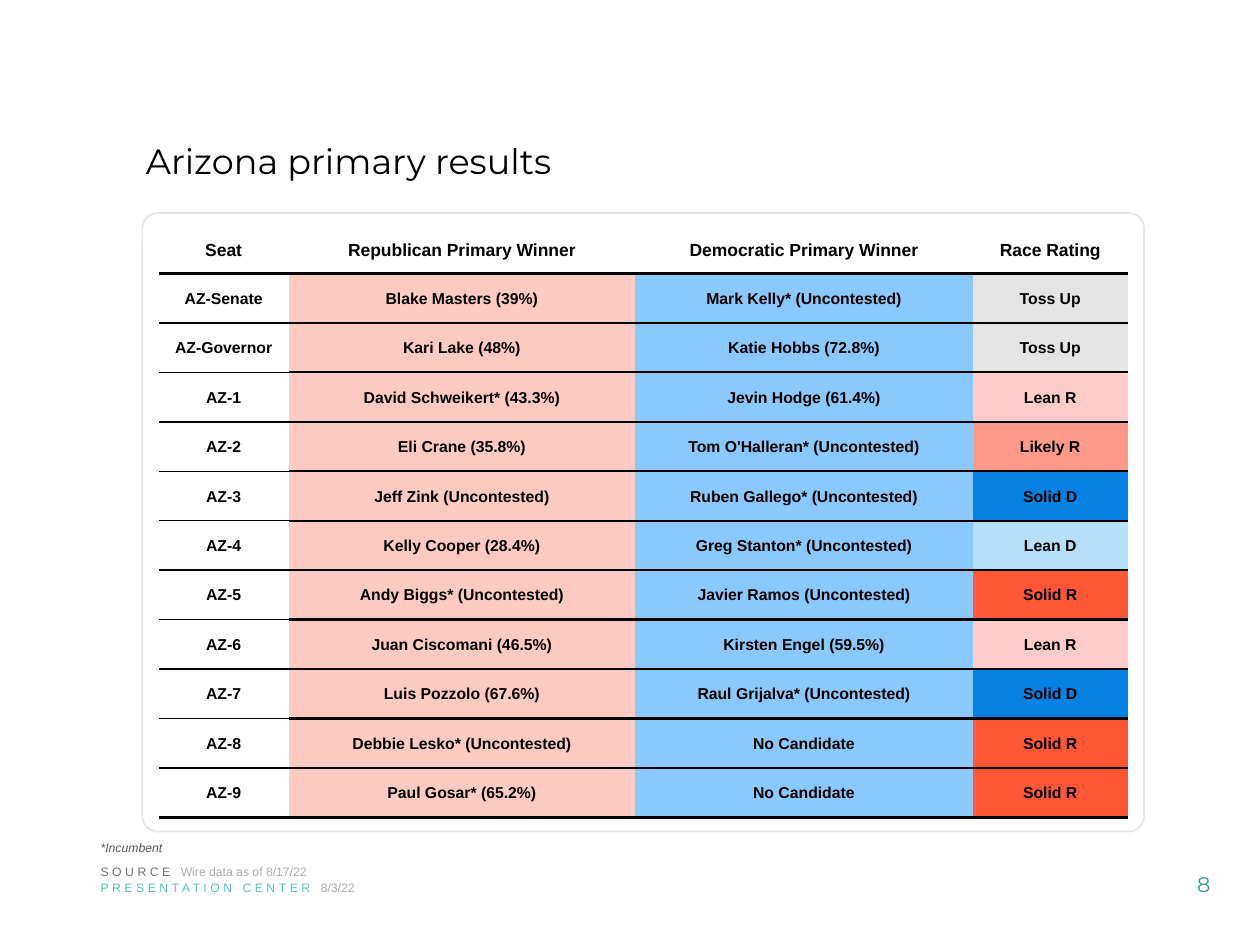
from lxml.etree import SubElement
from pptx import Presentation
from pptx.dml.color import RGBColor
from pptx.enum.shapes import MSO_SHAPE
from pptx.enum.text import MSO_ANCHOR, PP_ALIGN
from pptx.oxml.ns import qn
from pptx.util import Emu, Pt

PX = 9144  # 100 px to the inch
THEME = {
    "body": "Arial", "display": "Montserrat",
    "title_size": 20, "number_size": 12, "header_size": 10, "cell_size": 9, "note_size": 7,
    "black": "000000", "white": "FFFFFF", "panel_line": "E7E6E6",
    "teal": "55C6B5", "number": "359F8F", "label": "767171", "muted": "AFABAB", "note": "595959",
    "republican": "FFCAC1", "democratic": "8BC9FD",
    "Toss Up": "E4E4E4", "Lean R": "FFCCCA", "Likely R": "FE9A87", "Solid R": "FF5736",
    "Lean D": "B5E0FA", "Solid D": "0581E4",
}
HEADERS = ["Seat", "Republican Primary Winner", "Democratic Primary Winner", "Race Rating"]
RACES = [
    ("AZ-Senate", "Blake Masters (39%)", "Mark Kelly* (Uncontested)", "Toss Up"),
    ("AZ-Governor", "Kari Lake (48%)", "Katie Hobbs (72.8%)", "Toss Up"),
    ("AZ-1", "David Schweikert* (43.3%)", "Jevin Hodge (61.4%)", "Lean R"),
    ("AZ-2", "Eli Crane (35.8%)", "Tom O'Halleran* (Uncontested)", "Likely R"),
    ("AZ-3", "Jeff Zink (Uncontested)", "Ruben Gallego* (Uncontested)", "Solid D"),
    ("AZ-4", "Kelly Cooper (28.4%)", "Greg Stanton* (Uncontested)", "Lean D"),
    ("AZ-5", "Andy Biggs* (Uncontested)", "Javier Ramos (Uncontested)", "Solid R"),
    ("AZ-6", "Juan Ciscomani (46.5%)", "Kirsten Engel (59.5%)", "Lean R"),
    ("AZ-7", "Luis Pozzolo (67.6%)", "Raul Grijalva* (Uncontested)", "Solid D"),
    ("AZ-8", "Debbie Lesko* (Uncontested)", "No Candidate", "Solid R"),
    ("AZ-9", "Paul Gosar* (65.2%)", "No Candidate", "Solid R"),
]
COLUMN_WIDTHS = [103, 275, 268, 123]
TABLE_LEFT, TABLE_TOP, TABLE_HEIGHT, HEADER_HEIGHT = 126, 179, 470, 38


def add_span(para, text, color, size, face="body", spacing=0, **formats):
    """Append a run; spacing is letter spacing in hundredths of a point."""
    span = para.add_run()
    span.text = text
    formats.update(name=THEME[face], size=Pt(THEME[size]))
    for name, value in formats.items():
        setattr(span.font, name, value)
    span.font.color.rgb = RGBColor.from_string(THEME[color])
    if spacing:
        span._r.get_or_add_rPr().set("spc", str(spacing))


def add_border(cell, side, width, color=None):
    """Draw one cell edge; without a color the edge is left empty."""
    line = SubElement(cell._tc.get_or_add_tcPr(), qn(f"a:ln{side}"), w=str(Pt(width)))
    if color is None:
        SubElement(line, qn("a:noFill"))
    else:
        SubElement(SubElement(line, qn("a:solidFill")), qn("a:srgbClr"), val=THEME[color])


deck = Presentation()
deck.slide_width, deck.slide_height = 1000 * PX, 750 * PX
page = deck.slides.add_slide(deck.slide_layouts[6])

# Panel behind the table
panel = page.shapes.add_shape(
    MSO_SHAPE.ROUNDED_RECTANGLE, *(n * PX for n in (113, 169, 795, 491)))
panel.adjustments[0] = 0.025
panel.shadow.inherit = False
panel.fill.solid()
panel.fill.fore_color.rgb = RGBColor.from_string(THEME["white"])
panel.line.color.rgb = RGBColor.from_string(THEME["panel_line"])
panel.line.width = Pt(1)

# Title, footers and page number: place, anchor, paragraph formats, spans
TEXTS = [
    ((106, 90, 803, 79), MSO_ANCHOR.MIDDLE, {"line_spacing": 0.9},
     [dict(text="Arizona primary results", color="black", size="title_size", face="display")]),
    ((70, 662, 902, 22), MSO_ANCHOR.TOP, {},
     [dict(text="*Incumbent", color="note", size="note_size", italic=True)]),
    ((70, 681, 399, 22), MSO_ANCHOR.TOP, {},
     [dict(text="SOURCE ", color="label", size="note_size", spacing=200),
      dict(text="Wire data as of 8/17/22", color="muted", size="note_size")]),
    ((70, 694, 294, 22), MSO_ANCHOR.TOP, {},
     [dict(text="PRESENTATION CENTER ", color="teal", size="note_size", spacing=200),
      dict(text="8/3/22", color="muted", size="note_size")]),
    ((911, 682, 89, 40), MSO_ANCHOR.MIDDLE, {"alignment": PP_ALIGN.CENTER},
     [dict(text="8", color="number", size="number_size", face="display")]),
]
for place, anchor, formats, spans in TEXTS:
    box = page.shapes.add_textbox(*(n * PX for n in place))
    box.text_frame.word_wrap = True
    box.text_frame.vertical_anchor = anchor
    para = box.text_frame.paragraphs[0]
    for name, value in formats.items():
        setattr(para, name, value)
    for span in spans:
        add_span(para, **span)

# Results table
table = page.shapes.add_table(
    len(RACES) + 1, len(HEADERS), TABLE_LEFT * PX, TABLE_TOP * PX,
    sum(COLUMN_WIDTHS) * PX, TABLE_HEIGHT * PX).table
table.first_row = table.horz_banding = False
for column, width in zip(table.columns, COLUMN_WIDTHS):
    column.width = width * PX
for row in table.rows:
    row.height = Emu((TABLE_HEIGHT - HEADER_HEIGHT) * PX // len(RACES))
table.rows[0].height = HEADER_HEIGHT * PX

CELL_FORMATS = {"vertical_anchor": MSO_ANCHOR.MIDDLE, "margin_left": PX, "margin_right": PX,
                "margin_top": PX, "margin_bottom": 0}
for r, texts in enumerate([HEADERS, *RACES]):
    fills = [None, "republican", "democratic", texts[-1]] if r else [None] * len(HEADERS)
    for c, (text, fill) in enumerate(zip(texts, fills)):
        cell = table.cell(r, c)
        for name, value in CELL_FORMATS.items():
            setattr(cell, name, value)
        rule = 1 if r and c == 0 else 1.5
        for side in "LR":
            add_border(cell, side, 1)
        if r == 0:
            add_border(cell, "T", 1)
        else:
            add_border(cell, "T", 1.5 if r == 1 else rule, "black")
        add_border(cell, "B", 1.5 if r == len(RACES) else rule, "black")
        if fill:
            cell.fill.solid()
            cell.fill.fore_color.rgb = RGBColor.from_string(THEME[fill])
        else:
            cell.fill.background()
        para = cell.text_frame.paragraphs[0]
        para.alignment = PP_ALIGN.CENTER
        add_span(para, text, "black", "cell_size" if r else "header_size", bold=True)

deck.save("out.pptx")
